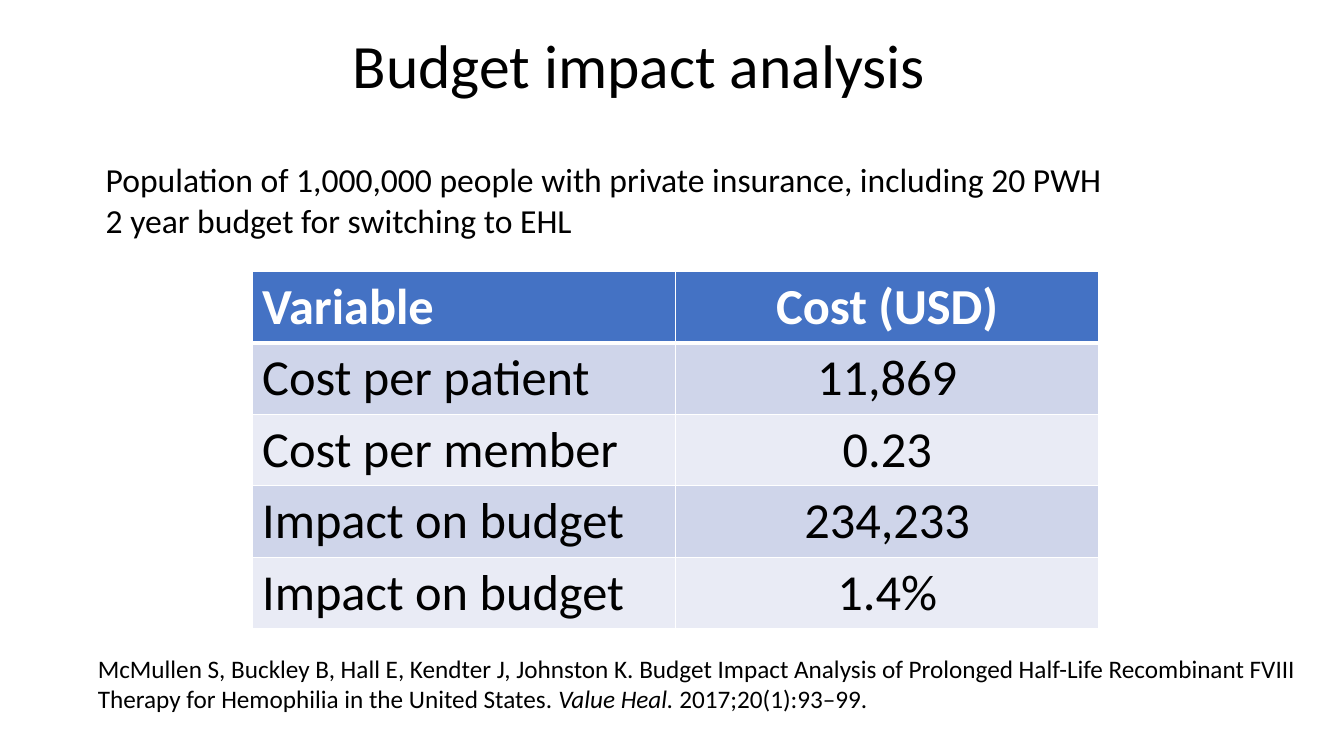
from lxml.etree import SubElement
from pptx import Presentation
from pptx.dml.color import RGBColor
from pptx.enum.text import MSO_ANCHOR, PP_ALIGN
from pptx.oxml.ns import qn
from pptx.util import Pt

TITLE = "Budget impact analysis"
SCOPE = [
    "Population of 1,000,000 people with private insurance, including 20 PWH",
    "2 year budget for switching to EHL",
]
COSTS = [
    ("Variable", "Cost (USD)"),
    ("Cost per patient", "11,869"),
    ("Cost per member", "0.23"),
    ("Impact on budget", "234,233"),
    ("Impact on budget", "1.4%"),
]
CITATION = [
    ("McMullen S, Buckley B, Hall E, Kendter J, Johnston K. Budget Impact Analysis of "
     "Prolonged Half-Life Recombinant FVIII Therapy for Hemophilia in the United States. ", False),
    ("Value Heal.", True),
    (" 2017;20(1):93–99.", False),
]

BLACK = RGBColor(0x00, 0x00, 0x00)
WHITE = RGBColor(0xFF, 0xFF, 0xFF)
HEADER_BLUE = RGBColor(0x44, 0x72, 0xC4)
BANDS = [RGBColor(0xE9, 0xEB, 0xF5), RGBColor(0xCF, 0xD5, 0xEA)]
FONT = "Calibri"
EMU_PER_PX = 9144
ROW_HEIGHT = 71
COLUMN_WIDTH = 420


def px(length):
    return length * EMU_PER_PX


def style(span, size, color=BLACK, bold=False, italic=False):
    font = span.font
    font.name, font.size = FONT, Pt(size)
    font.bold, font.italic = bold, italic
    font.color.rgb = color


def add_text(page, left, top, width, height, paragraphs, size, wrap=True):
    box = page.shapes.add_textbox(px(left), px(top), px(width), px(height))
    frame = box.text_frame
    frame.word_wrap = wrap
    for index, spans in enumerate(paragraphs):
        para = frame.paragraphs[0] if index == 0 else frame.add_paragraph()
        for text, italic in spans:
            span = para.add_run()
            span.text = text
            style(span, size, italic=italic)
    return frame


def add_borders(cell, widths):
    properties = cell._tc.get_or_add_tcPr()
    for position, (side, width) in enumerate(widths.items()):
        line = SubElement(properties, qn(f"a:ln{side}"), w=str(Pt(width)))
        fill = SubElement(line, qn("a:solidFill"))
        SubElement(fill, qn("a:srgbClr"), val=str(WHITE))
        properties.insert(position, line)


def add_cost_table(page, left, top):
    row_count, column_count = len(COSTS), len(COSTS[0])
    table = page.shapes.add_table(
        row_count, column_count, px(left), px(top),
        px(COLUMN_WIDTH * column_count), px(ROW_HEIGHT * row_count),
    ).table
    for row, values in enumerate(COSTS):
        header = row == 0
        for column, value in enumerate(values):
            cell = table.cell(row, column)
            cell.text = value
            para = cell.text_frame.paragraphs[0]
            para.alignment = PP_ALIGN.CENTER if column else PP_ALIGN.LEFT
            style(para.runs[0], 36, WHITE if header else BLACK, bold=header)
            cell.fill.solid()
            cell.fill.fore_color.rgb = HEADER_BLUE if header else BANDS[row % 2]
            add_borders(cell, {"L": 1, "R": 1, "T": 3 if row == 1 else 1, "B": 3 if header else 1})


def main():
    deck = Presentation()
    deck.slide_width, deck.slide_height = px(1333), px(750)
    page = deck.slides.add_slide(deck.slide_layouts[6])

    title = add_text(page, 238, 0, 792, 135, [[(TITLE, False)]], 44)
    title.vertical_anchor = MSO_ANCHOR.MIDDLE
    title.paragraphs[0].alignment = PP_ALIGN.CENTER
    title.paragraphs[0].line_spacing = 0.9

    add_cost_table(page, 250, 269)
    citation = add_text(page, 43, 643, 1254, 71, [CITATION], 18)
    citation.margin_left = px(54)
    add_text(page, 95, 153, 1017, 91, [[(line, False)] for line in SCOPE], 24, wrap=False)

    deck.save("out.pptx")


if __name__ == "__main__":
    main()
